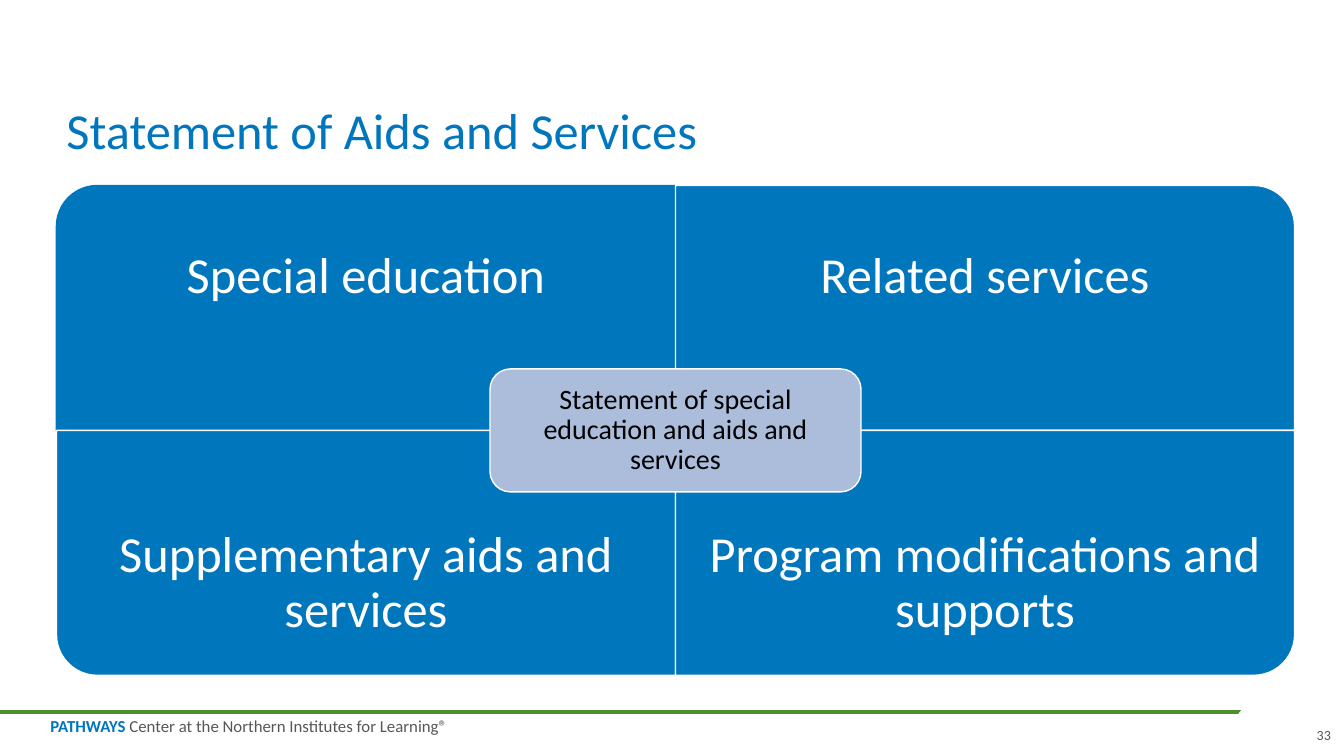
from pptx import Presentation
from pptx.dml.color import RGBColor
from pptx.enum.shapes import MSO_CONNECTOR, MSO_SHAPE
from pptx.enum.text import MSO_ANCHOR, PP_ALIGN
from pptx.oxml.ns import qn
from pptx.util import Inches, Pt
from lxml.etree import SubElement

COLORS = {
    "blue": "0076BD",
    "pale_blue": "ABBDDB",
    "green": "4C902D",
    "gray": "59565A",
    "white": "FFFFFF",
    "black": "000000",
}


def add_panel(preset, left, top, width, height, fill, outline=None, rotation=0):
    """Add a filled shape without shadow; without an outline colour it has no line."""
    panel = slide.shapes.add_shape(
        preset, Inches(left), Inches(top), Inches(width), Inches(height))
    panel.shadow.inherit = False
    panel.rotation = rotation
    panel.fill.solid()
    panel.fill.fore_color.rgb = RGBColor.from_string(COLORS[fill])
    if outline:
        panel.line.color.rgb = RGBColor.from_string(COLORS[outline])
        panel.line.width = Pt(1)
    else:
        panel.line.fill.background()
    return panel


def write(text, box=None, holder=None, size=36, color="blue", lead="", align=PP_ALIGN.LEFT,
          anchor=MSO_ANCHOR.TOP, inset=0, spacing=0.9, wrap=True):
    """Write text into holder, or a new text box at box; lead is a bold blue opening."""
    holder = holder or slide.shapes.add_textbox(*map(Inches, box))
    frame = holder.text_frame
    frame.word_wrap = wrap
    frame.vertical_anchor = anchor
    frame.margin_left = frame.margin_right = Inches(inset)
    frame.margin_top = frame.margin_bottom = Inches(inset)
    paragraph = frame.paragraphs[0]
    paragraph.alignment = align
    paragraph.line_spacing = spacing
    for words, tint, bold in ((lead, "blue", True), (text, color, False)):
        if words:
            run = paragraph.add_run()
            run.text = words
            run.font.name = "Calibri"
            run.font.size = Pt(size)
            run.font.bold = bold
            run.font.color.rgb = RGBColor.from_string(COLORS[tint])


deck = Presentation()
deck.slide_width, deck.slide_height = Inches(13.33), Inches(7.5)
slide = deck.slides.add_slide(deck.slide_layouts[6])

# Footer
footer_rule = slide.shapes.add_connector(
    MSO_CONNECTOR.STRAIGHT, Inches(0), Inches(7.06), Inches(13), Inches(7.06))
footer_rule.line.color.rgb = RGBColor.from_string(COLORS["green"])
footer_rule.line.width = Pt(3)
SubElement(footer_rule._element.spPr, qn("a:effectLst"))
write(" Center at the Northern Institutes for Learning®", (0.5, 7.13, 4.02, 0.17),
      lead="PATHWAYS", size=12, color="gray", spacing=0.85, wrap=False)
add_panel(MSO_SHAPE.OVAL, 12.16, 6.77, 1.19, 0.58, "white", rotation=332.1)

write("Statement of Aids and Services", (0.66, 0.64, 12.17, 0.95), anchor=MSO_ANCHOR.BOTTOM)

# Four quadrants, each with its rounded corner turned outwards
GRID_LEFT, GRID_TOP = 0.56, 1.84
QUAD_WIDTH, QUAD_HEIGHT, LABEL_HEIGHT = 6.14, 2.43, 1.82
quadrants = [
    ("Special education", 270, "blue"),
    ("Related services", 0, "white"),
    ("Supplementary aids and services", 180, "white"),
    ("Program modifications and supports", 90, "white"),
]
for index, (service, rotation, outline) in enumerate(quadrants):
    row, column = divmod(index, 2)
    left = GRID_LEFT + column * QUAD_WIDTH
    top = GRID_TOP + row * QUAD_HEIGHT
    width, height = QUAD_WIDTH, QUAD_HEIGHT
    if rotation % 180:
        width, height = height, width
    add_panel(MSO_SHAPE.ROUND_1_RECTANGLE, left + (QUAD_WIDTH - width) / 2,
              top + (QUAD_HEIGHT - height) / 2, width, height, "blue", outline, rotation)
    label_top = top + row * (QUAD_HEIGHT - LABEL_HEIGHT)
    write(service, (left, label_top, QUAD_WIDTH, LABEL_HEIGHT), color="white",
          align=PP_ALIGN.CENTER, anchor=MSO_ANCHOR.MIDDLE, inset=0.28)

hub = add_panel(MSO_SHAPE.ROUNDED_RECTANGLE, 4.86, 3.66, 3.68, 1.22, "pale_blue", "white")
write("Statement of special education and aids and services", holder=hub, size=20,
      color="black", align=PP_ALIGN.CENTER, anchor=MSO_ANCHOR.MIDDLE, inset=0.08)

write("33", (13.03, 7.2, 0.17, 0.17), size=10, color="gray", align=PP_ALIGN.RIGHT,
      anchor=MSO_ANCHOR.BOTTOM, spacing=1.0, wrap=False)

deck.save("out.pptx")
